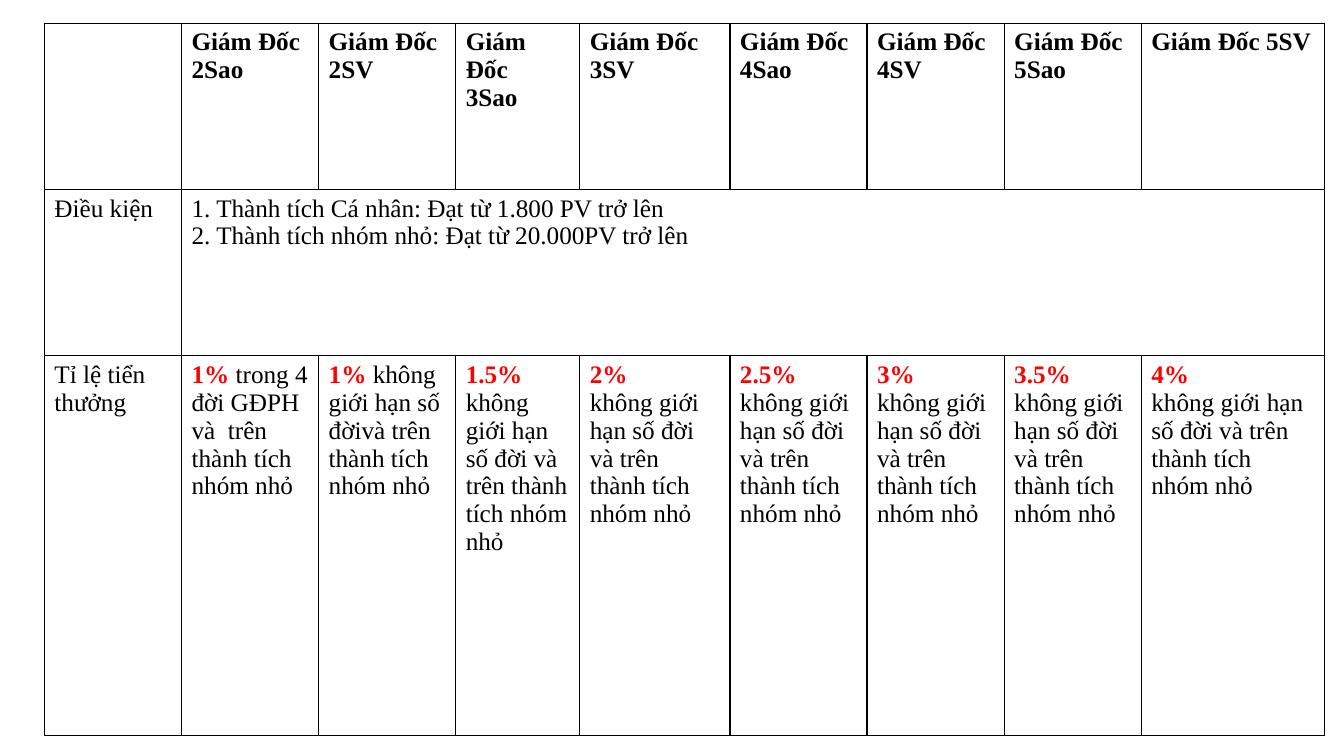
import pptx
import pptx.util
import pptx.dml.color
import pptx.oxml
import lxml.etree

Inches = pptx.util.Inches
COLORS = {"ink": "000000", "rate": "FF0000", "paper": "FFFFFF"}
COLUMN_WIDTHS = [1.36, 1.36, 1.36, 1.23, 1.49, 1.36, 1.36, 1.36, 1.82]
ROW_HEIGHTS = [1.65, 1.65, 3.77]
RANKS = [
    ["Giám Đốc", "2Sao"],
    ["Giám Đốc 2SV"],
    ["Giám Đốc", "3Sao"],
    ["Giám Đốc 3SV"],
    ["Giám Đốc 4Sao"],
    ["Giám Đốc 4SV"],
    ["Giám Đốc 5Sao"],
    ["Giám Đốc 5SV"],
]
CONDITIONS = [
    "1. Thành tích Cá nhân: Đạt từ 1.800 PV trở lên",
    "2. Thành tích nhóm nhỏ: Đạt từ 20.000PV trở lên",
]
UNLIMITED = "không giới hạn số đời và trên thành tích nhóm nhỏ"
INLINE_REWARDS = [
    ("1%", " trong 4 đời GĐPH và  trên thành tích nhóm nhỏ"),
    ("1%", " không giới hạn số đờivà trên thành tích nhóm nhỏ"),
    ("1.5% ", UNLIMITED),
]
STACKED_RATES = ["2%", "2.5%", "3%", "3.5%", "4%"]


class SlideBuilder:
    font = "Times New Roman"
    size = 18
    border_width = 1

    def __init__(self, slide):
        self.slide = slide

    def table(self, left, top, column_widths, row_heights):
        frame = self.slide.shapes.add_table(
            len(row_heights), len(column_widths), Inches(left), Inches(top),
            Inches(sum(column_widths)), Inches(sum(row_heights)))
        table = frame.table
        table.first_row = False
        table.horz_banding = False
        for column, width in zip(table.columns, column_widths):
            column.width = Inches(width)
        for row, height in zip(table.rows, row_heights):
            row.height = Inches(height)
        for cell in table.iter_cells():
            self.borders(cell)
            cell.fill.solid()
            cell.fill.fore_color.rgb = pptx.dml.color.RGBColor.from_string(COLORS["paper"])
            cell.text_frame.paragraphs[0].font.size = pptx.util.Pt(self.size)
        return table

    def borders(self, cell):
        properties = cell._tc.get_or_add_tcPr()
        for side in ("lnL", "lnR", "lnT", "lnB"):
            line = lxml.etree.SubElement(properties, pptx.oxml.ns.qn(f"a:{side}"))
            line.set("w", str(pptx.util.Pt(self.border_width)))
            fill = lxml.etree.SubElement(line, pptx.oxml.ns.qn("a:solidFill"))
            color = lxml.etree.SubElement(fill, pptx.oxml.ns.qn("a:srgbClr"))
            color.set("val", COLORS["ink"])

    def cell_text(self, cell, paragraphs):
        frame = cell.text_frame
        for index, runs in enumerate(paragraphs):
            paragraph = frame.add_paragraph() if index else frame.paragraphs[0]
            for text, color, bold in runs:
                run = paragraph.add_run()
                run.text = text
                run.font.name = self.font
                run.font.size = pptx.util.Pt(self.size)
                run.font.bold = bold
                run.font.color.rgb = pptx.dml.color.RGBColor.from_string(COLORS[color])


def plain(text):
    return (text, "ink", False)


def rate(text):
    return (text, "rate", True)


def main():
    presentation = pptx.Presentation()
    presentation.slide_width = Inches(13.33)
    presentation.slide_height = Inches(7.5)
    builder = SlideBuilder(presentation.slides.add_slide(presentation.slide_layouts[6]))
    table = builder.table(0.44, 0.23, COLUMN_WIDTHS, ROW_HEIGHTS)

    for column, lines in enumerate(RANKS, 1):
        builder.cell_text(table.cell(0, column), [[(line, "ink", True)] for line in lines])

    table.cell(1, 1).merge(table.cell(1, len(RANKS)))
    builder.cell_text(table.cell(1, 0), [[plain("Điều kiện")]])
    builder.cell_text(table.cell(1, 1), [[plain(line)] for line in CONDITIONS])

    builder.cell_text(table.cell(2, 0), [[plain("Tỉ lệ tiển thưởng")]])
    rewards = [[[rate(share), plain(scope)]] for share, scope in INLINE_REWARDS]
    rewards += [[[rate(share)], [plain(UNLIMITED)]] for share in STACKED_RATES]
    for column, paragraphs in enumerate(rewards, 1):
        builder.cell_text(table.cell(2, column), paragraphs)

    presentation.save("out.pptx")


if __name__ == "__main__":
    main()
